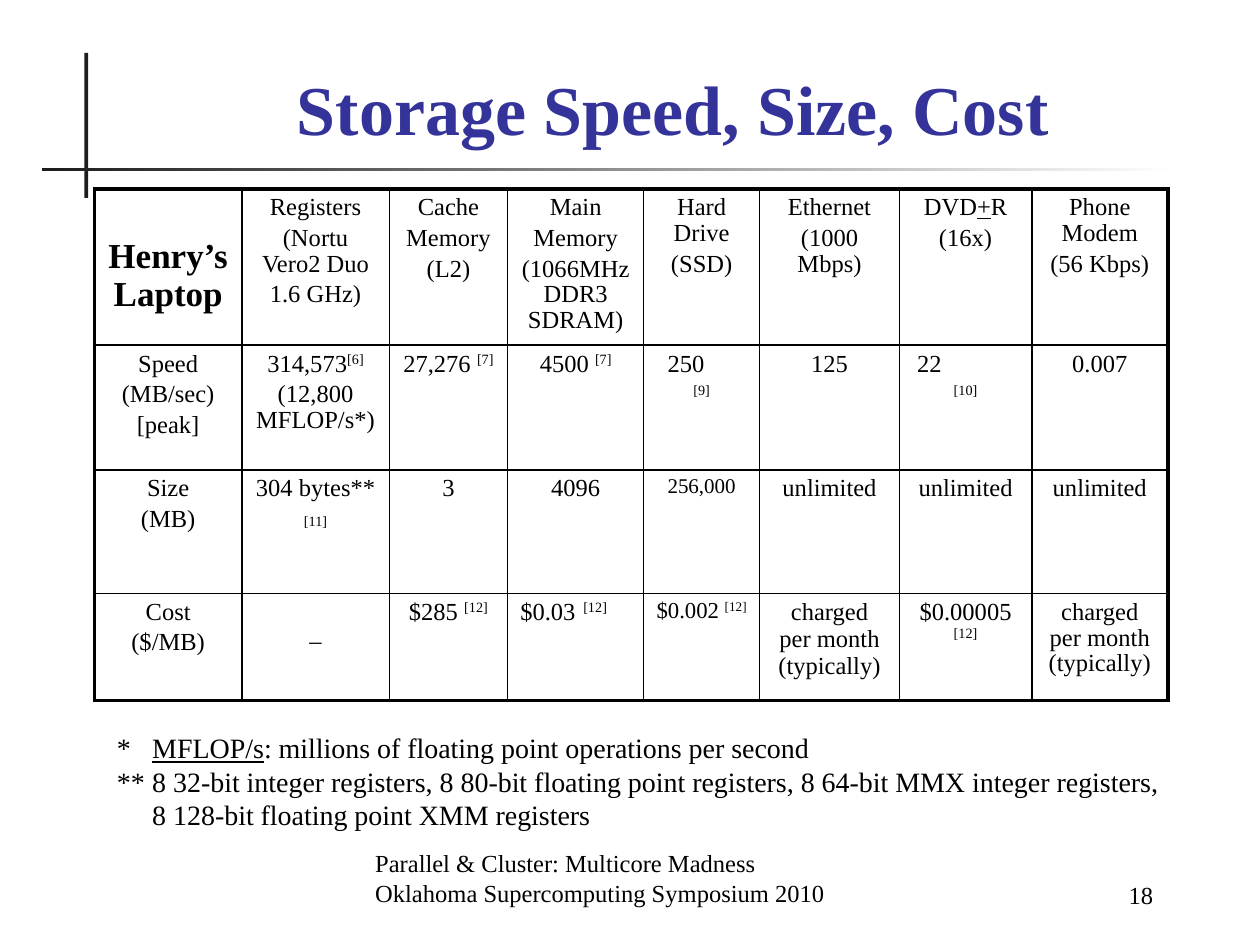
from pptx import Presentation
from pptx.dml.color import RGBColor
from pptx.enum.shapes import MSO_SHAPE
from pptx.enum.text import MSO_ANCHOR, PP_ALIGN
from pptx.oxml.ns import qn
from pptx.util import Inches, Pt
from lxml.etree import SubElement

COLORS = {"ink": "000000", "title": "333399", "rule": "1C1C1C", "paper": "FFFFFF"}
FONT = "Times New Roman"


def write(p, text, size=14, color="ink", bold=False, align=PP_ALIGN.LEFT,
          left=0, hang=0, tab=None, line=None, before=0):
    pPr = p._p.get_or_add_pPr()
    pPr.set("marL", str(Inches(left)))
    pPr.set("indent", str(Inches(-hang)))
    if tab:
        tabs = SubElement(pPr, qn("a:tabLst"))
        SubElement(tabs, qn("a:tab"), pos=str(Inches(tab)), algn="l")
    p.alignment = align
    p.space_before = Pt(before)
    if line:
        p.line_spacing = line
    for piece in text.split("|"):
        r = p.add_run()
        r.text = piece.lstrip("^_")
        r.font.name = FONT
        r.font.size = Pt(size)
        r.font.bold = bold
        r.font.color.rgb = RGBColor.from_string(COLORS[color])
        if piece.startswith("^"):
            r.font._element.set("baseline", "30000")
        if piece.startswith("_"):
            r.font.underline = True


prs = Presentation()
prs.slide_width = Inches(10)
prs.slide_height = Inches(7.5)
s = prs.slides.add_slide(prs.slide_layouts[5])

for x, y, w, h in [(0.67, 0.42, 0.03, 1.15), (0.33, 1.33, 9, 0.03)]:
    sp = s.shapes.add_shape(MSO_SHAPE.RECTANGLE, Inches(x), Inches(y), Inches(w), Inches(h))
    sp.shadow.inherit = False
    sp.line.fill.background()
    if w > h:
        sp.fill.gradient()
        sp.fill.gradient_angle = 0
        for stop, name in zip(sp.fill.gradient_stops, ["rule", "paper"]):
            stop.color.rgb = RGBColor.from_string(COLORS[name])
    else:
        sp.fill.solid()
        sp.fill.fore_color.rgb = RGBColor.from_string(COLORS["rule"])

title = s.shapes.title
title.left, title.top = Inches(1.08), Inches(0.5)
title.width, title.height = Inches(8.52), Inches(0.74)
title.text_frame.vertical_anchor = MSO_ANCHOR.BOTTOM
write(title.text_frame.paragraphs[0], "Storage Speed, Size, Cost", size=40,
      color="title", bold=True, align=PP_ALIGN.CENTER)

rows = [
    ["Henry’s\nLaptop", "Registers\n(Nortu Vero2 Duo\n1.6 GHz)", "Cache\nMemory\n(L2)",
     "Main\nMemory\n(1066MHz DDR3 SDRAM)", "Hard Drive\n(SSD)", "Ethernet\n(1000 Mbps)",
     "DVD|_+|R\n(16x)", "Phone Modem\n(56 Kbps)"],
    ["Speed\n(MB/sec)\n[peak]", "314,573|^[6]\n(12,800 MFLOP/s*)", "27,276 |^[7]",
     "4500 |^[7]", "250\n^[9]", "125", "22\n^[10]", "0.007"],
    ["Size\n(MB)", "304 bytes**\n^[11]", "3", "4096", "256,000",
     "unlimited", "unlimited", "unlimited"],
    ["Cost\n($/MB)", "–", "$285 |^[12]", "$0.03\t|^[12]", "$0.002 |^[12]",
     "charged\nper month\n(typically)", "$0.00005 |^[12]", "charged per month (typically)"],
]
formats = {
    "Henry’s": dict(size=20, bold=True, line=0.8),
    "Laptop": dict(size=20, bold=True, line=0.8),
    "250": dict(align=PP_ALIGN.LEFT, left=0.09),
    "22": dict(align=PP_ALIGN.LEFT, left=0.04),
    "^[11]": dict(line=1.2),
    "256,000": dict(size=12),
    "$0.03\t|^[12]": dict(align=PP_ALIGN.LEFT, tab=0.67),
    "$0.002 |^[12]": dict(size=13),
    "–": dict(line=0.8),
    "per month": dict(line=0.8),
    "(typically)": dict(line=0.8),
}
top_margins = {"Henry’s\nLaptop": 0.43, "–": 0.31}
col_widths = [1.17, 1.17, 0.94, 1.08, 0.92, 1.11, 1.05, 1.08]
row_heights = [1.24, 0.99, 0.98, 0.85]

table = s.shapes.add_table(len(rows), len(col_widths), Inches(0.75), Inches(1.5),
                           Inches(sum(col_widths)), Inches(sum(row_heights))).table
table.first_row = False
table.horz_banding = False
for col, width in zip(table.columns, col_widths):
    col.width = Inches(width)
for row, height in zip(table.rows, row_heights):
    row.height = Inches(height)

for i, row in enumerate(rows):
    for j, text in enumerate(row):
        cell = table.cell(i, j)
        cell.margin_top = Inches(top_margins.get(text, 0.05))
        tcPr = cell._tc.get_or_add_tcPr()
        outer = {"L": j == 0, "R": j == len(row) - 1, "T": i == 0, "B": i == len(rows) - 1}
        for side, thick in outer.items():
            ln = SubElement(tcPr, qn(f"a:ln{side}"), w=str(Pt(2.25 if thick else 1)))
            fill = SubElement(ln, qn("a:solidFill"))
            SubElement(fill, qn("a:srgbClr"), val=COLORS["ink"])
        cell.fill.background()
        tf = cell.text_frame
        for n, part in enumerate(text.split("\n")):
            p = tf.add_paragraph() if n else tf.paragraphs[0]
            form = dict(align=PP_ALIGN.CENTER, line=0.95, size=14) | formats.get(part, {})
            write(p, part, before=0.2 * form["size"] if n else 0, **form)

note = dict(size=16, left=0.28)
hanging = dict(note, hang=0.28, tab=0.28)
boxes = [
    (2.88, 6.75, 4.37, 0.5, MSO_ANCHOR.BOTTOM,
     [("Parallel & Cluster: Multicore Madness", {}),
      ("Oklahoma Supercomputing Symposium 2010", {})]),
    (7.83, 6.77, 1.42, 0.5, MSO_ANCHOR.BOTTOM, [("18", dict(align=PP_ALIGN.RIGHT))]),
    (0.83, 5.75, 8.52, 0.9, MSO_ANCHOR.TOP,
     [("*\t|_MFLOP/s|: millions of floating point operations per second", hanging),
      ("**\t8 32-bit integer registers, 8 80-bit floating point registers, "
       "8 64-bit MMX integer registers,", hanging),
      ("8 128-bit floating point XMM registers", note)]),
]
for x, y, w, h, anchor, lines in boxes:
    tf = s.shapes.add_textbox(Inches(x), Inches(y), Inches(w), Inches(h)).text_frame
    tf.word_wrap = True
    tf.vertical_anchor = anchor
    for n, (text, form) in enumerate(lines):
        write(tf.add_paragraph() if n else tf.paragraphs[0], text, **form)

prs.save("out.pptx")
